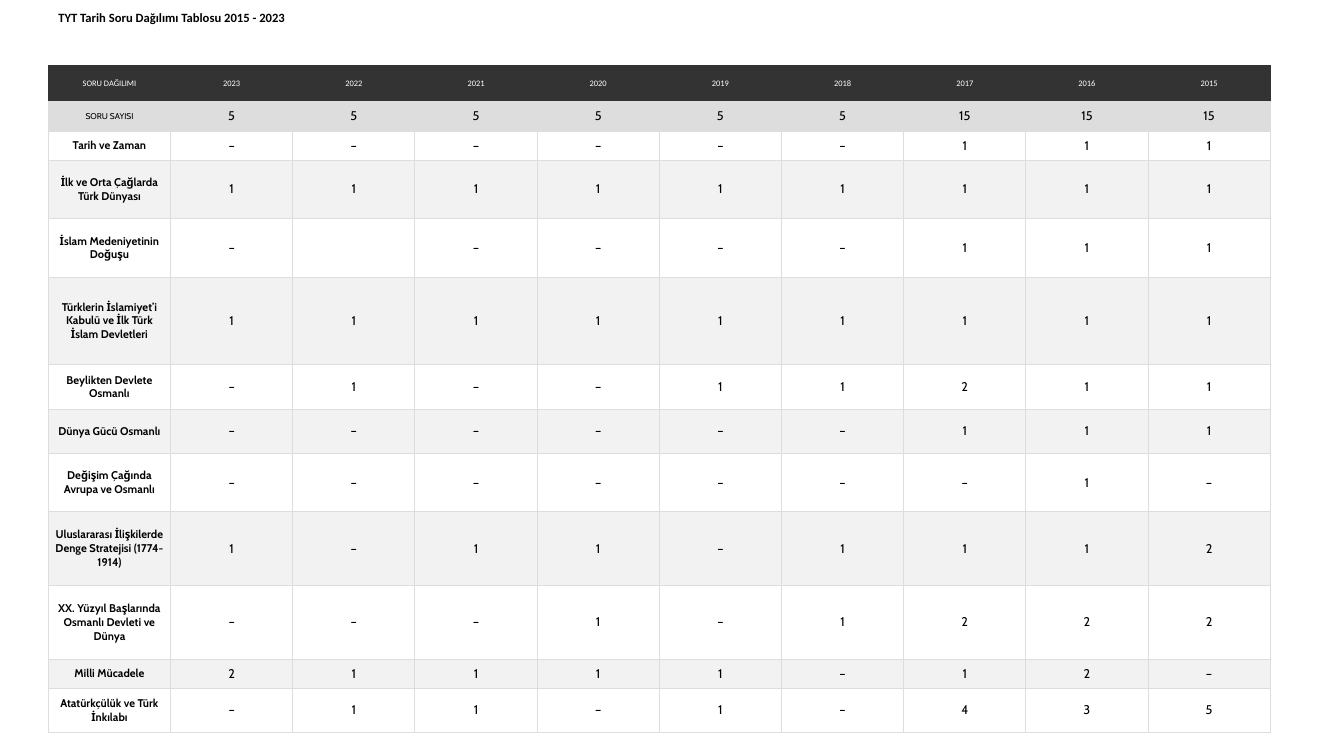
import pptx
import pptx.dml.color
import pptx.enum.shapes
import pptx.enum.text
import pptx.oxml
import pptx.oxml.ns
import pptx.util

Inches = pptx.util.Inches
COLORS = {
    "header": "333333",
    "border": "DDDDDD",
    "band": "F2F2F2",
    "white": "FFFFFF",
    "black": "000000",
}


def write_text(frame, text, font="Cabin", size=9, bold=False, color="black", align="CENTER"):
    paragraph = frame.paragraphs[0]
    paragraph.alignment = getattr(pptx.enum.text.PP_ALIGN, align)
    run = paragraph.add_run()
    run.text = text
    run.font.name = font
    run.font.size = pptx.util.Pt(size)
    run.font.bold = bold
    run.font.color.rgb = pptx.dml.color.RGBColor.from_string(COLORS[color])


def add_border(cell, side, color):
    cell._tc.get_or_add_tcPr().append(pptx.oxml.parse_xml(
        f'<a:ln{side} {pptx.oxml.ns.nsdecls("a")} w="9525"><a:solidFill>'
        f'<a:srgbClr val="{COLORS[color]}"/></a:solidFill></a:ln{side}>'))


presentation = pptx.Presentation()
presentation.slide_width = Inches(13.33)
presentation.slide_height = Inches(7.5)
slide = presentation.slides.add_slide(presentation.slide_layouts[6])

rows = [
    (0.36, "SORU DAĞILIMI", "2023 2022 2021 2020 2019 2018 2017 2016 2015"),
    (0.29, "SORU SAYISI", "5 5 5 5 5 5 15 15 15"),
    (0.29, "Tarih ve Zaman", "– – – – – – 1 1 1"),
    (0.58, "İlk ve Orta Çağlarda Türk Dünyası", "1 1 1 1 1 1 1 1 1"),
    (0.58, "İslam Medeniyetinin Doğuşu", "–  – – – – 1 1 1"),
    (0.87, "Türklerin İslamiyet’i Kabulü ve İlk Türk İslam Devletleri", "1 1 1 1 1 1 1 1 1"),
    (0.44, "Beylikten Devlete Osmanlı", "– 1 – – 1 1 2 1 1"),
    (0.44, "Dünya Gücü Osmanlı", "– – – – – – 1 1 1"),
    (0.58, "Değişim Çağında Avrupa ve Osmanlı", "– – – – – – – 1 –"),
    (0.73, "Uluslararası İlişkilerde Denge Stratejisi (1774-1914)", "1 – 1 1 – 1 1 1 2"),
    (0.73, "XX. Yüzyıl Başlarında Osmanlı Devleti ve Dünya", "– – – 1 – 1 2 2 2"),
    (0.29, "Milli Mücadele", "2 1 1 1 1 – 1 2 –"),
    (0.44, "Atatürkçülük ve Türk İnkılabı", "– 1 1 – 1 – 4 3 5"),
]

table_frame = slide.shapes.add_table(
    len(rows), 10, Inches(0.48), Inches(0.65), Inches(12.12), Inches(6.61))
table = table_frame.table
table.horz_banding = False
table.first_row = False
for column in table.columns:
    column.width = Inches(1.212)

for row_index, (height, topic, counts) in enumerate(rows):
    table.rows[row_index].height = Inches(height)
    is_header = row_index == 0
    if is_header:
        fill = "header"
    elif row_index == 1:
        fill = "border"
    else:
        fill = "band" if row_index % 2 else "white"

    for column_index, text in enumerate([topic] + counts.split(" ")):
        cell = table.cell(row_index, column_index)
        cell.vertical_anchor = pptx.enum.text.MSO_ANCHOR.MIDDLE
        cell.margin_left = cell.margin_right = Inches(0.01 if is_header else 0.05)
        cell.margin_top = cell.margin_bottom = Inches(0.08 if is_header else 0.05)
        for side in "LRTB":
            add_border(cell, side, "header" if is_header and side != "B" else "border")
        cell.fill.solid()
        cell.fill.fore_color.rgb = pptx.dml.color.RGBColor.from_string(COLORS[fill])

        if is_header:
            write_text(cell.text_frame, text, font="Calibri", size=6, color="white")
        elif column_index == 0:
            is_topic = row_index > 1
            write_text(cell.text_frame, text, size=8 if is_topic else 6, bold=is_topic)
        elif text:
            write_text(cell.text_frame, text)

title = slide.shapes.add_shape(
    pptx.enum.shapes.MSO_SHAPE.RECTANGLE, Inches(0.48), Inches(0.1), Inches(12.85), Inches(0.5))
title.shadow.inherit = False
title.fill.solid()
title.fill.fore_color.rgb = pptx.dml.color.RGBColor.from_string(COLORS["white"])
title.line.fill.background()
title.text_frame.word_wrap = False
title.text_frame.vertical_anchor = pptx.enum.text.MSO_ANCHOR.TOP
title.text_frame.margin_top = 0
write_text(title.text_frame, "TYT Tarih Soru Dağılımı Tablosu 2015 - 2023",
           font="Calibri", bold=True, align="LEFT")

presentation.save("out.pptx")
